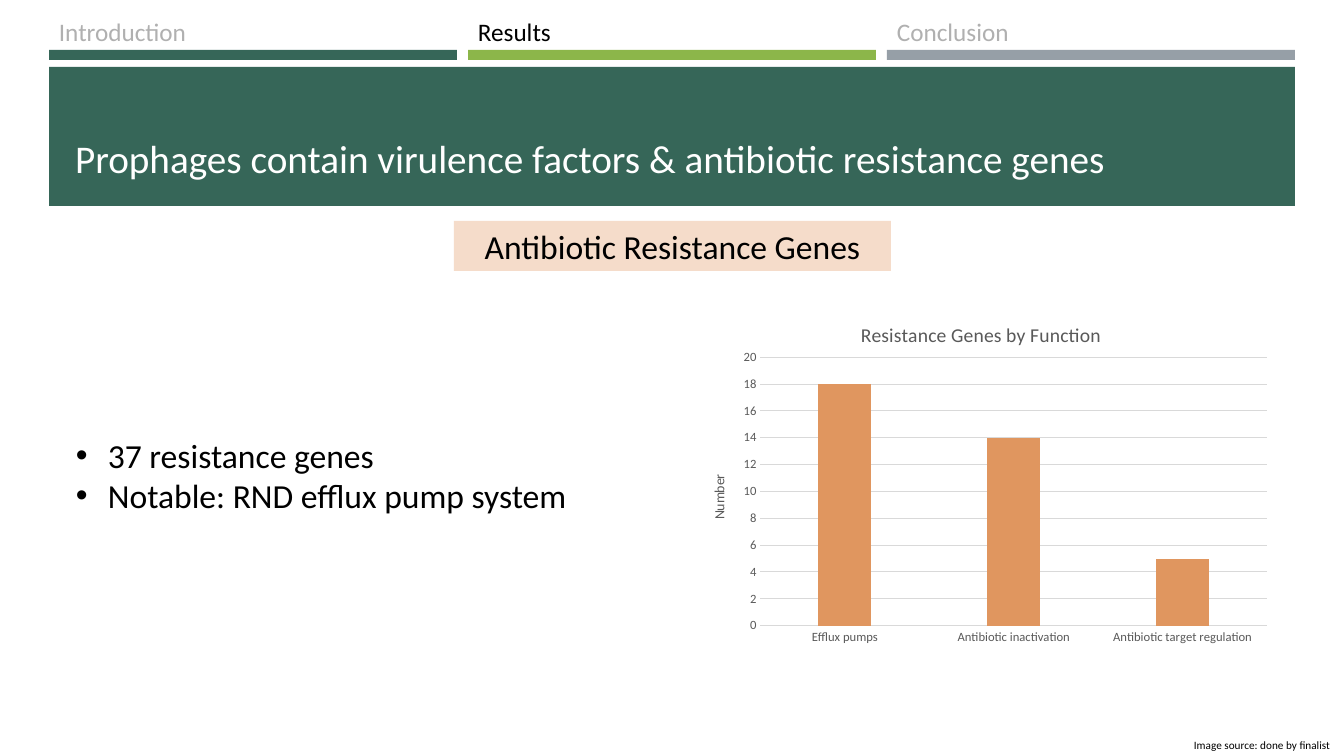
from dataclasses import dataclass

from lxml.etree import SubElement
from pptx import Presentation
from pptx.chart.data import CategoryChartData
from pptx.dml.color import RGBColor
from pptx.enum.chart import XL_CHART_TYPE, XL_TICK_MARK
from pptx.enum.shapes import MSO_SHAPE
from pptx.enum.text import MSO_ANCHOR, MSO_AUTO_SIZE, PP_ALIGN
from pptx.oxml import parse_xml
from pptx.oxml.ns import nsdecls, qn
from pptx.util import Emu, Pt

FONT = "Calibri"
COLORS = {
    "green": "366658",
    "lime": "8CB64A",
    "slate": "969FA7",
    "peach": "F5DCCA",
    "orange": "E0965F",
    "white": "FFFFFF",
    "black": "000000",
    "inactive": "B0B0B0",
    "label": "595959",
    "grid": "D9D9D9",
}
SLIDE_WIDTH, SLIDE_HEIGHT = 1344, 756
TAB_LEFT, TAB_STEP, TAB_WIDTH = 49, 419, 408


@dataclass(frozen=True)
class Area:
    left: int
    top: int
    width: int
    height: int

    def emu(self) -> tuple[Emu, ...]:
        return tuple(px(side) for side in (self.left, self.top, self.width, self.height))


@dataclass(frozen=True)
class Tab:
    label: str
    bar: str
    text: str


TABS = (
    Tab("Introduction", "green", "inactive"),
    Tab("Results", "lime", "black"),
    Tab("Conclusion", "slate", "inactive"),
)
FINDINGS = ("37 resistance genes", "Notable: RND efflux pump system")
GENE_COUNTS = {"Efflux pumps": 18, "Antibiotic inactivation": 14, "Antibiotic target regulation": 5}
PLOT_LAYOUT = {"x": 0.13, "y": 0.14, "w": 0.85, "h": 0.72}


def px(length: int) -> Emu:
    """Turn px into EMU, at 100.8 px to the inch."""
    return Emu(round(length * 914400 / 100.8))


def rgb(color: str) -> RGBColor:
    return RGBColor.from_string(COLORS[color])


def style_font(font, size: float, color: str) -> None:
    font.name = FONT
    font.size = Pt(size)
    font.bold = False
    font.color.rgb = rgb(color)


def write(para, text: str, size: float, color: str) -> None:
    span = para.add_run()
    span.text = text
    style_font(span.font, size, color)


def add_block(slide, area: Area, color: str):
    block = slide.shapes.add_shape(MSO_SHAPE.RECTANGLE, *area.emu())
    block.shadow.inherit = False
    block.fill.solid()
    block.fill.fore_color.rgb = rgb(color)
    block.line.fill.background()
    return block


def add_text(slide, area: Area, lines: tuple[str, ...], size: float, color: str):
    box = slide.shapes.add_textbox(*area.emu())
    frame = box.text_frame
    frame.word_wrap = True
    for index, line in enumerate(lines):
        para = frame.add_paragraph() if index else frame.paragraphs[0]
        write(para, line, size, color)
    return box


def add_bullet(para) -> None:
    properties = para._p.get_or_add_pPr()
    properties.set("marL", str(px(32)))
    properties.set("indent", str(-px(32)))
    SubElement(properties, qn("a:buFont"), typeface="Arial")
    SubElement(properties, qn("a:buChar"), char="•")


def add_tabs(slide) -> None:
    for index, tab in enumerate(TABS):
        left = TAB_LEFT + index * TAB_STEP
        add_block(slide, Area(left, 50, TAB_WIDTH, 10), tab.bar)
        add_text(slide, Area(left, 11, TAB_WIDTH, 40), (tab.label,), 18, tab.text)


def add_title(slide, text: str) -> None:
    """Fill the title placeholder and raise it above its band."""
    add_block(slide, Area(TAB_LEFT, 67, 1246, 139), "green")
    title = slide.shapes.title
    title.left, title.top, title.width, title.height = Area(65, 77, 1216, 109).emu()
    frame = title.text_frame
    frame.auto_size = MSO_AUTO_SIZE.NONE
    frame.vertical_anchor = MSO_ANCHOR.BOTTOM
    para = frame.paragraphs[0]
    para.alignment = PP_ALIGN.LEFT
    write(para, text, 28, "white")
    title.element.getparent().append(title.element)


def place_plot(chart) -> None:
    """Fix the inner plot area as fractions of the chart."""
    plot_area = chart.element.find(".//" + qn("c:plotArea"))
    for layout in plot_area.findall(qn("c:layout")):
        plot_area.remove(layout)
    modes = '<c:xMode val="edge"/><c:yMode val="edge"/>'
    sizes = "".join(f'<c:{side} val="{value}"/>' for side, value in PLOT_LAYOUT.items())
    plot_area.insert(0, parse_xml(
        f'<c:layout {nsdecls("c")}><c:manualLayout><c:layoutTarget val="inner"/>'
        f"{modes}{sizes}</c:manualLayout></c:layout>"
    ))


def style_axes(chart) -> None:
    categories, values = chart.category_axis, chart.value_axis
    for axis in (categories, values):
        axis.major_tick_mark = axis.minor_tick_mark = XL_TICK_MARK.NONE
        style_font(axis.tick_labels.font, 9, "label")
    values.minimum_scale, values.maximum_scale, values.major_unit = 0, 20, 2
    values.has_major_gridlines = True
    for line in (categories.format.line, values.major_gridlines.format.line):
        line.color.rgb = rgb("grid")
        line.width = Pt(0.75)
    values.format.line.fill.background()
    axis_title = values.axis_title
    write(axis_title.text_frame.paragraphs[0], "Number", 10, "label")
    axis_title.element.find(".//" + qn("a:bodyPr")).set("rot", "-5400000")


def add_gene_chart(slide) -> None:
    chart_data = CategoryChartData()
    chart_data.categories = list(GENE_COUNTS)
    chart_data.add_series("Series 1", list(GENE_COUNTS.values()))
    area = Area(683, 305, 596, 373)
    chart = slide.shapes.add_chart(XL_CHART_TYPE.COLUMN_CLUSTERED, *area.emu(), chart_data).chart
    style_font(chart.font, 10, "black")
    chart.has_legend = False
    chart.has_title = True
    write(chart.chart_title.text_frame.paragraphs[0], "Resistance Genes by Function", 14, "label")
    plot = chart.plots[0]
    plot.vary_by_categories = False
    plot.gap_width, plot.overlap = 219, -27
    fill = plot.series[0].format.fill
    fill.solid()
    fill.fore_color.rgb = rgb("orange")
    style_axes(chart)
    place_plot(chart)


def main() -> None:
    deck = Presentation()
    deck.slide_width, deck.slide_height = px(SLIDE_WIDTH), px(SLIDE_HEIGHT)
    slide = deck.slides.add_slide(deck.slide_layouts.get_by_name("Title Only"))
    add_tabs(slide)
    add_title(slide, "Prophages contain virulence factors & antibiotic resistance genes")
    findings = add_text(slide, Area(66, 430, 606, 92), FINDINGS, 24, "black")
    for para in findings.text_frame.paragraphs:
        add_bullet(para)
    topic = add_block(slide, Area(454, 221, 437, 50), "peach")
    topic_para = topic.text_frame.paragraphs[0]
    topic_para.alignment = PP_ALIGN.CENTER
    write(topic_para, "Antibiotic Resistance Genes", 24, "black")
    add_gene_chart(slide)
    credit = add_text(slide, Area(1184, 733, 158, 23), ("Image source: done by finalist",), 8, "black")
    credit.text_frame.word_wrap = False
    deck.save("out.pptx")


if __name__ == "__main__":
    main()
